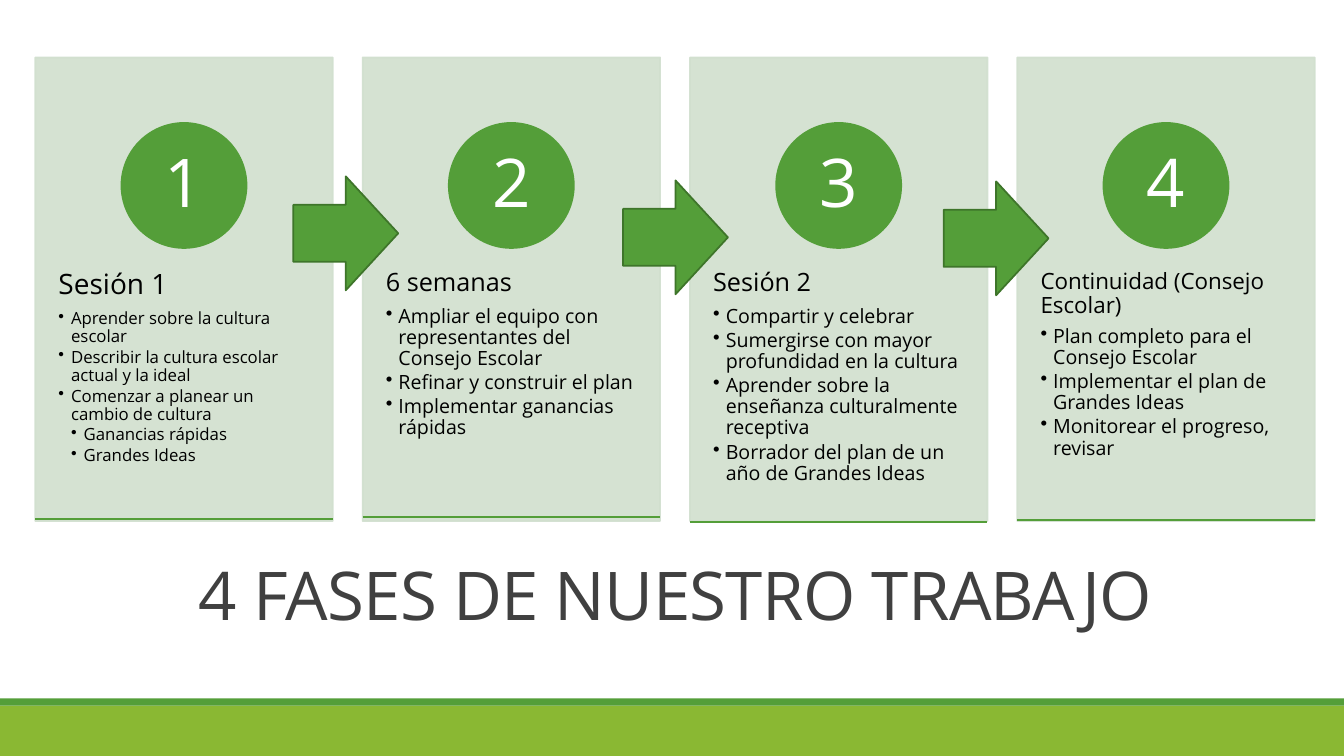
import dataclasses
import pptx
import pptx.util
import pptx.dml.color
import pptx.enum.shapes
import pptx.enum.text
import pptx.oxml
import pptx.oxml.ns

Inches = pptx.util.Inches
Pt = pptx.util.Pt
Kind = pptx.enum.shapes.MSO_SHAPE
Align = pptx.enum.text.PP_ALIGN
Anchor = pptx.enum.text.MSO_ANCHOR


@dataclasses.dataclass(frozen=True)
class Theme:
    """Colours, font and type sizes of the slide."""
    font: str = "Open Sans"
    green: str = "549E39"
    dark: str = "3E752A"
    lime: str = "8AB833"
    pale: str = "D1DFCE"
    gray: str = "404040"
    black: str = "000000"
    white: str = "FFFFFF"
    big: int = 48
    edge: float = 1.25


THEME = Theme()
PHASES = [
    ("Sesión 1", 20, 12, 5.15, [
        (1, "Aprender sobre la cultura escolar"),
        (1, "Describir la cultura escolar actual y la ideal"),
        (1, "Comenzar a planear un cambio de cultura"),
        (2, "Ganancias rápidas"),
        (2, "Grandes Ideas")]),
    ("6 semanas", 18, 14, 5.13, [
        (1, "Ampliar el equipo con representantes del Consejo Escolar"),
        (1, "Refinar y construir el plan"),
        (1, "Implementar ganancias rápidas")]),
    ("Sesión 2", 18, 14, 5.18, [
        (1, "Compartir y celebrar"),
        (1, "Sumergirse con mayor profundidad en la cultura"),
        (1, "Aprender sobre la enseñanza culturalmente receptiva"),
        (1, "Borrador del plan de un año de Grandes Ideas")]),
    ("Continuidad (Consejo Escolar)", 16, 14, 5.16, [
        (1, "Plan completo para el Consejo Escolar"),
        (1, "Implementar el plan de Grandes Ideas"),
        (1, "Monitorear el progreso, revisar")]),
]
ARROWS = [(2.91, 1.75), (6.18, 1.79), (9.36, 1.8)]


def tint(name):
    """Turn a hex string into a colour."""
    return pptx.dml.color.RGBColor.from_string(name)


def child(node, tag, **attrs):
    """Append an element in the drawing namespace."""
    item = pptx.oxml.ns.qn(tag)
    item = node.makeelement(item, attrs)
    node.append(item)
    return item


def shape(slide, kind, box, fill, line=None):
    """Add a flat preset shape to the box."""
    item = slide.shapes.add_shape(kind, *map(Inches, box))
    item.shadow.inherit = False
    item.fill.solid()
    item.fill.fore_color.rgb = tint(fill)
    if line:
        item.line.color.rgb = tint(line)
        item.line.width = Pt(THEME.edge)
    else:
        item.line.fill.background()
    return item


def style(para, size, color, lead, after=0):
    """Set the type and spacing of a paragraph."""
    para.font.name = THEME.font
    para.font.size = Pt(size)
    para.font.color.rgb = tint(color)
    para.line_spacing = lead
    para.space_before = Pt(0)
    para.space_after = Pt(after * size)


def inset(frame, side, top):
    """Set the margins of a wrapped text frame."""
    frame.word_wrap = True
    frame.margin_left = frame.margin_right = Inches(side)
    frame.margin_top = frame.margin_bottom = Inches(top)


def bullet(para, level):
    """Give a paragraph a hanging bullet."""
    para.level = level
    props = para._p.get_or_add_pPr()
    props.set("marL", str(Inches(0.125 * level)))
    props.set("indent", str(-Inches(0.125)))
    child(props, "a:buChar", char="•")


def notes(slide, box, head, big, small, items):
    """Write a heading and its bullets in the box."""
    frame = slide.shapes.add_textbox(*map(Inches, box)).text_frame
    inset(frame, 0.23, 0.36)
    para = frame.paragraphs[0]
    para.text = head
    style(para, big, THEME.black, 0.9, 0.35)
    for level, text in items:
        para = frame.add_paragraph()
        para.text = text
        style(para, small, THEME.black, 0.9, 0.15)
        bullet(para, level)


def badge(slide, box, text):
    """Draw a numbered circle in the box."""
    disc = shape(slide, Kind.OVAL, box, THEME.green, THEME.green)
    frame = disc.text_frame
    inset(frame, 0.1, 0.01)
    frame.vertical_anchor = Anchor.MIDDLE
    para = frame.paragraphs[0]
    para.text = text
    para.alignment = Align.CENTER
    style(para, THEME.big, THEME.white, 0.9, 0.35)


def rule(slide, left, top, width):
    """Draw a green line across a panel."""
    line = slide.shapes.add_connector(
        pptx.enum.shapes.MSO_CONNECTOR.STRAIGHT,
        *map(Inches, (left, top, left + width, top)))
    line.line.color.rgb = tint(THEME.green)
    line.line.width = Pt(THEME.edge)
    child(line._element.spPr, "a:effectLst")


def panel(slide, box, number, phase):
    """Build one phase panel in the box."""
    left, top, width, height = box
    head, big, small, base, items = phase
    card = shape(slide, Kind.RECTANGLE, box, THEME.pale, THEME.pale)
    for color in card._element.spPr.iter(pptx.oxml.ns.qn("a:srgbClr")):
        child(color, "a:alpha", val="90000")
    notes(slide, (left, top + 1.75, width, height * 0.6),
          head, big, small, items)
    size = 1.24
    badge(slide, (left + (width - size) / 2, top + 0.65, size, size),
          str(number))
    rule(slide, left, base, width)


def title(slide, box, text):
    """Place and format the slide title."""
    item = slide.shapes.title
    item.left, item.top, item.width, item.height = map(Inches, box)
    frame = item.text_frame
    frame.auto_size = pptx.enum.text.MSO_AUTO_SIZE.NONE
    inset(frame, 0.2, 0.2)
    frame.vertical_anchor = Anchor.MIDDLE
    para = frame.paragraphs[0]
    para.text = text
    para.alignment = Align.CENTER
    style(para, THEME.big, THEME.gray, 0.85)
    para.runs[0].font._element.set("spc", "-50")


def footer(slide, box):
    """Draw the two-tone band in the box."""
    left, top, width, height = box
    thin = 0.07
    shape(slide, Kind.RECTANGLE,
          (left, top + thin, width, height - thin), THEME.lime)
    shape(slide, Kind.RECTANGLE, (left, top, width, thin), THEME.green)


def main():
    """Build and save the deck."""
    deck = pptx.Presentation()
    deck.slide_width, deck.slide_height = Inches(13.33), Inches(7.5)
    slide = deck.slides.add_slide(deck.slide_layouts[5])
    footer(slide, (0, 6.93, 13.33, 0.57))
    title(slide, (1.2, 5.3, 11, 1.3), "4 FASES DE NUESTRO TRABAJO")
    first, last = 0.35, 10.09
    step = (last - first) / (len(PHASES) - 1)
    for i, phase in enumerate(PHASES):
        panel(slide, (first + i * step, 0.57, 2.95, 4.6), i + 1, phase)
    for left, top in ARROWS:
        shape(slide, Kind.RIGHT_ARROW, (left, top, 1.04, 1.13),
              THEME.green, THEME.dark)
    deck.save("out.pptx")


if __name__ == "__main__":
    main()
